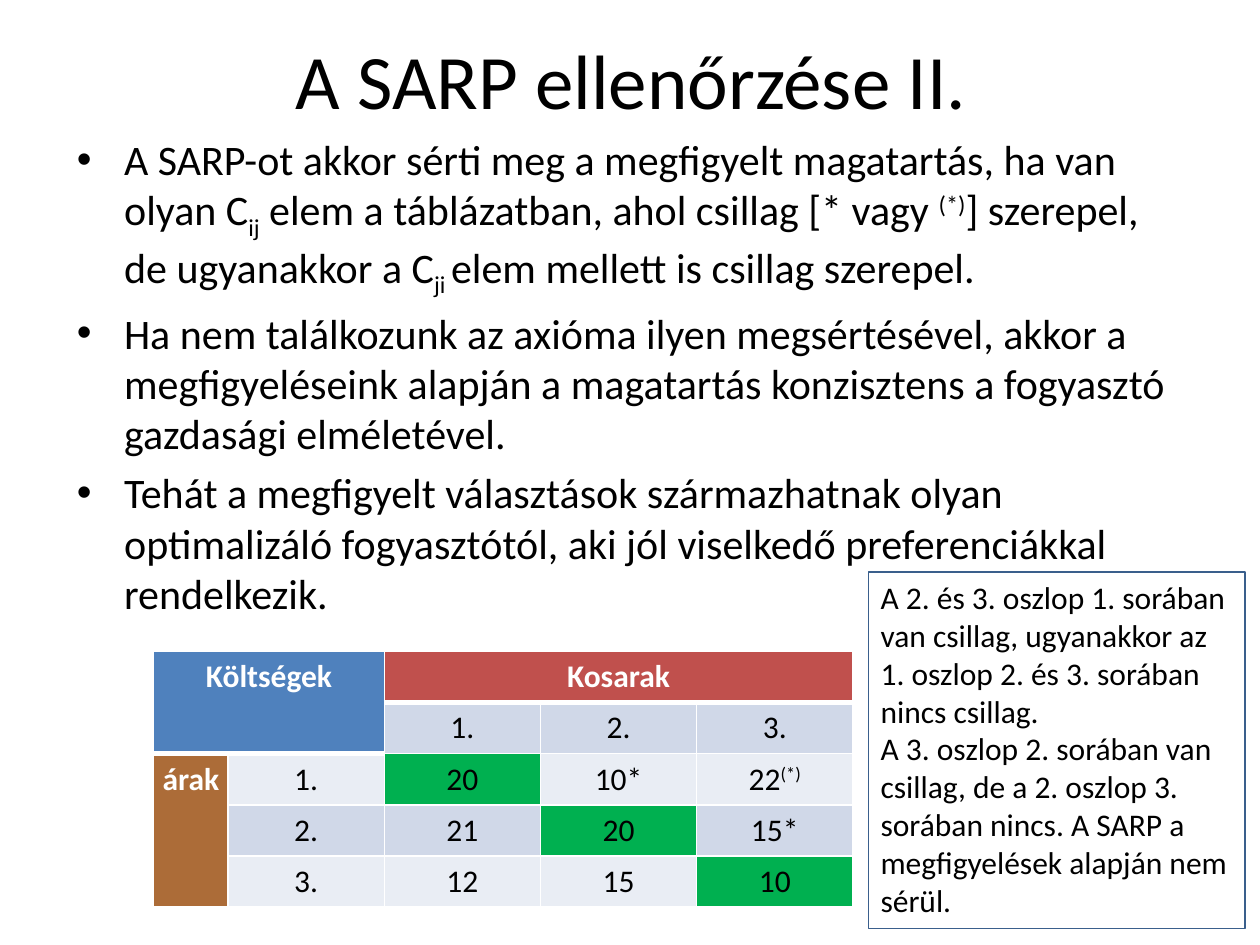
"""Build the slide on checking SARP with a cost table."""
from lxml import etree
from pptx import Presentation
from pptx.dml.color import RGBColor
from pptx.enum.shapes import MSO_SHAPE
from pptx.enum.text import MSO_ANCHOR, MSO_AUTO_SIZE, PP_ALIGN
from pptx.oxml.ns import qn
from pptx.util import Inches, Pt

RECT = MSO_SHAPE.RECTANGLE
TOP, MIDDLE = MSO_ANCHOR.TOP, MSO_ANCHOR.MIDDLE
NO_FIT = MSO_AUTO_SIZE.NONE
LEFT, CENTER = PP_ALIGN.LEFT, PP_ALIGN.CENTER
BLACK = RGBColor(0x00, 0x00, 0x00)
WHITE = RGBColor(0xFF, 0xFF, 0xFF)
BLUE = RGBColor(0x4F, 0x81, 0xBD)
RED = RGBColor(0xC0, 0x50, 0x4D)
BROWN = RGBColor(0x98, 0x48, 0x07)
GREEN = RGBColor(0x00, 0xB0, 0x50)
BAND_DARK = RGBColor(0xD0, 0xD8, 0xE8)
BAND_LIGHT = RGBColor(0xE9, 0xED, 0xF4)
OUTLINE = RGBColor(0x3A, 0x5F, 0x8C)


def add_text(p, text, size=18, color=BLACK, bold=False, base=0):
    r = p.add_run()
    r.text = text
    r.font.name = "Calibri"
    r.font.size = Pt(size)
    r.font.bold = bold
    r.font.color.rgb = color
    if base:
        r.font._element.set("baseline", str(base * 1000))


def set_borders(cell, widths):
    tcPr = cell._tc.get_or_add_tcPr()
    for i, (side, width) in enumerate(widths.items()):
        ln = etree.Element(qn("a:ln" + side), w=str(Pt(width)))
        fill = etree.SubElement(ln, qn("a:solidFill"))
        etree.SubElement(fill, qn("a:srgbClr"), val=str(WHITE))
        tcPr.insert(i, ln)


prs = Presentation()
prs.slide_width, prs.slide_height = Inches(10), Inches(7.5)
s = prs.slides.add_slide(prs.slide_layouts[1])

title = s.shapes.title
title.left, title.top = Inches(0.51), Inches(0)
title.width, title.height = Inches(9), Inches(1.25)
tf = title.text_frame
tf.auto_size = NO_FIT
tf.vertical_anchor = MIDDLE
tf.paragraphs[0].alignment = CENTER
add_text(tf.paragraphs[0], "A SARP ellenőrzése II.", size=44)

BULLETS = [
    [("A SARP-ot akkor sérti meg a megfigyelt magatartás, ha van olyan C", 0),
     ("ij", -25), (" elem a táblázatban, ahol csillag [* vagy ", 0),
     ("(*)", 30), ("] szerepel, de ugyanakkor a C", 0), ("ji ", -25),
     ("elem mellett is csillag szerepel.", 0)],
    [("Ha nem találkozunk az axióma ilyen megsértésével, akkor a "
      "megfigyeléseink alapján a magatartás konzisztens a fogyasztó "
      "gazdasági elméletével.", 0)],
    [("Tehát a megfigyelt választások származhatnak olyan optimalizáló "
      "fogyasztótól, aki jól viselkedő preferenciákkal rendelkezik.", 0)],
]
body = s.placeholders[1]
body.left, body.top = Inches(0.51), Inches(1.01)
body.width, body.height = Inches(9), Inches(4.95)
tf = body.text_frame
tf.auto_size = NO_FIT
for i, runs in enumerate(BULLETS):
    p = tf.add_paragraph() if i else tf.paragraphs[0]
    for text, base in runs:
        add_text(p, text, size=24, base=base)

ROWS = [
    ["Költségek", "", "Kosarak", "", ""],
    ["", "", "1.", "2.", "3."],
    ["árak", "1.", "20", "10*", "22"],
    ["", "2.", "21", "20", "15*"],
    ["", "3.", "12", "15", "10"],
]
HEADERS = {"Költségek": BLUE, "Kosarak": RED, "árak": BROWN}
table = s.shapes.add_table(5, 5, Inches(1.22), Inches(5.17),
                           Inches(5.53), Inches(2.03)).table
for i, col in enumerate(table.columns):
    col.width = Inches(1.24 if i else 0.59)
table.cell(0, 0).merge(table.cell(1, 1))
table.cell(0, 2).merge(table.cell(0, 4))
table.cell(2, 0).merge(table.cell(4, 0))

for row, texts in enumerate(ROWS):
    for col, text in enumerate(texts):
        cell = table.cell(row, col)
        cell.margin_left = cell.margin_right = Inches(0.05)
        cell.margin_top = cell.margin_bottom = Inches(0.05)
        header = text in HEADERS
        fill = HEADERS.get(text, BAND_DARK if row % 2 else BAND_LIGHT)
        if row > 1 and row == col:
            fill = GREEN
        cell.fill.solid()
        cell.fill.fore_color.rgb = fill
        head_end = 1 if col < 2 else 0
        set_borders(cell, {"L": 1, "R": 1,
                           "T": 3 if row == head_end + 1 else 1,
                           "B": 3 if row <= head_end else 1})
        if text:
            p = cell.text_frame.paragraphs[0]
            p.alignment = CENTER
            add_text(p, text, color=WHITE if header else BLACK, bold=header)

add_text(table.cell(2, 4).text_frame.paragraphs[0], "(*)", base=30)
brown = table.cell(2, 0)._tc.tcPr.find(qn("a:solidFill"))[0]
etree.SubElement(brown, qn("a:alpha"), val="80000")

NOTES = [
    "A 2. és 3. oszlop 1. sorában van csillag, ugyanakkor az 1. oszlop "
    "2. és 3. sorában nincs csillag.",
    "A 3. oszlop 2. sorában van csillag, de a 2. oszlop 3. sorában nincs. "
    "A SARP a megfigyelések alapján nem sérül.",
]
sp = s.shapes.add_shape(RECT, Inches(6.89), Inches(4.54),
                        Inches(2.99), Inches(2.83))
sp.shadow.inherit = False
sp.fill.background()
sp.line.color.rgb = OUTLINE
sp.line.width = Pt(0.75)
tf = sp.text_frame
tf.word_wrap = True
tf.vertical_anchor = TOP
for i, text in enumerate(NOTES):
    p = tf.add_paragraph() if i else tf.paragraphs[0]
    p.alignment = LEFT
    add_text(p, text)

prs.save("out.pptx")
